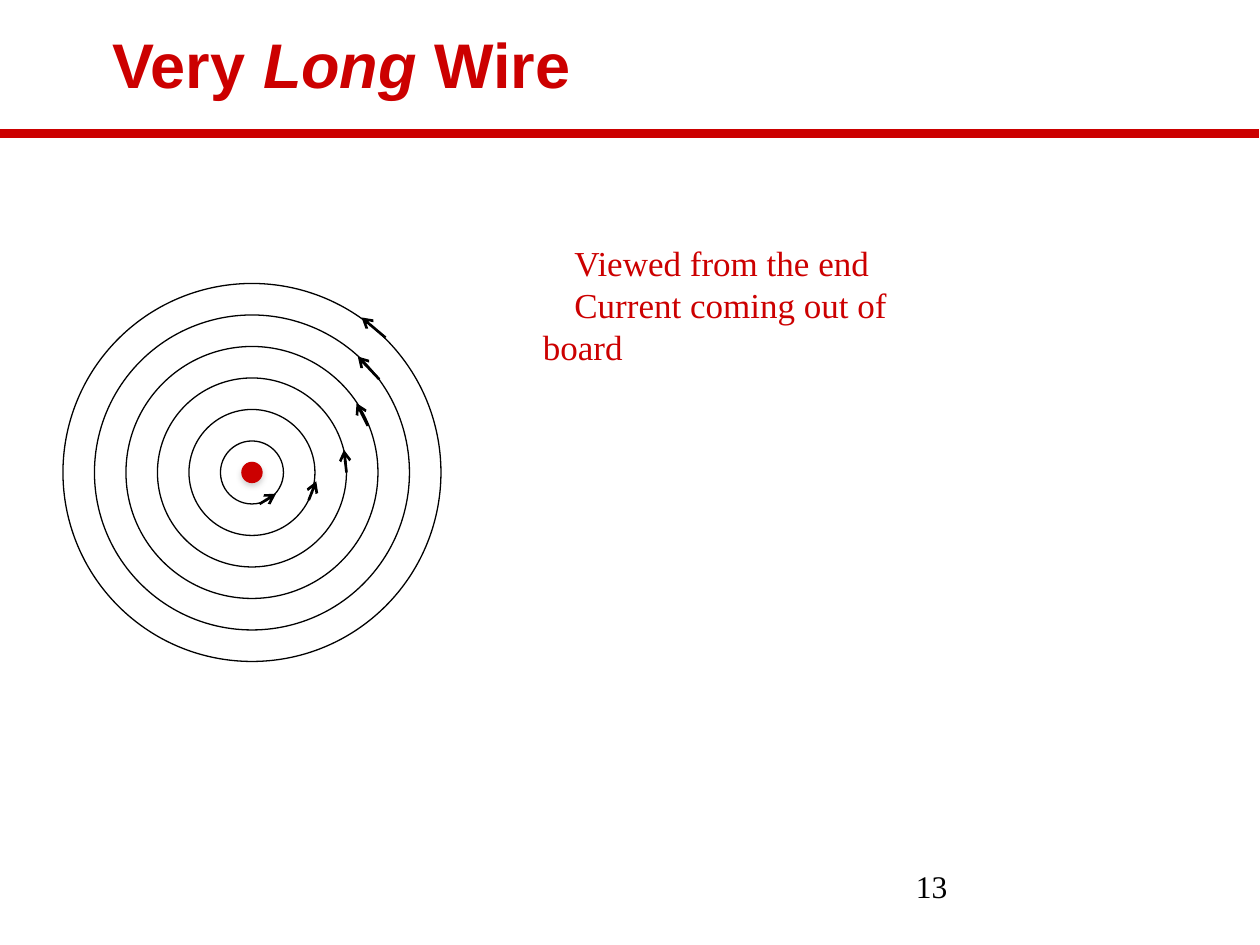
from lxml import etree
from pptx import Presentation, util as u
from pptx.dml.color import RGBColor
from pptx.enum import shapes, text
from pptx.oxml.ns import qn

PX = 9144  # 100 px to the inch
RED, BLACK, SHADOW = "CC0000", "000000", "808080"
SERIF, SANS = "Times New Roman", "Arial"

TITLE = [("Very ", False), ("Long", True), (" Wire", False)]
NOTES = ["Viewed from the end", "Current coming out of board"]
PAGE_NUMBER = "13"

CENTER = (200, 375)
RING_COUNT, RING_STEP = 6, 25
WIRE_RADIUS = 8.5
FIELD_ARROWS = [  # from the outer ring inwards
    ((306, 268), (287, 252)),
    ((301, 301), (284, 283)),
    ((292, 338), (283, 320)),
    ((275, 375), (273, 357)),
    ((245, 397), (251, 382)),
    ((206, 400), (219, 392)),
]
RULE = ((-1, 106), (999, 106))


def px(*lengths):
    return [u.Emu(round(n * PX)) for n in lengths]


def color(hex_code):
    return RGBColor.from_string(hex_code)


def add_circle(parent, radius):
    x, y = CENTER
    circle = parent.add_shape(
        shapes.MSO_SHAPE.OVAL, *px(x - radius, y - radius, 2 * radius, 2 * radius))
    circle.shadow.inherit = False
    return circle


def add_line(start, end, hex_code, width, arrow=False):
    line = slide.shapes.add_connector(
        shapes.MSO_CONNECTOR.STRAIGHT, *px(*start, *end))
    line.line.color.rgb = color(hex_code)
    line.line.width = u.Pt(width)
    etree.SubElement(line._element.spPr, qn("a:effectLst"))
    if arrow:
        etree.SubElement(line.line._get_or_add_ln(), qn("a:tailEnd"), type="arrow")


def add_text(box, paragraphs, font, indent=0, align=None, anchor=text.MSO_ANCHOR.TOP):
    """Write paragraphs, each a list of (wording, italic) runs, in one font."""
    frame = slide.shapes.add_textbox(*px(*box)).text_frame
    frame.word_wrap = True
    frame.vertical_anchor = anchor
    for i, runs in enumerate(paragraphs):
        paragraph = frame.add_paragraph() if i else frame.paragraphs[0]
        paragraph.alignment = align
        if indent:
            properties = paragraph._p.get_or_add_pPr()
            properties.set("marL", "0")
            properties.set("indent", str(indent * PX))
        for wording, italic in runs:
            run = paragraph.add_run()
            run.text = wording
            run.font.color.rgb = color(font["color"])
            for name, value in font["format"].items():
                setattr(run.font, name, value)
            run.font.italic = italic


def add_soft_shadow(shape):
    effects = shape._element.spPr.find(qn("a:effectLst"))
    shadow = etree.SubElement(
        effects, qn("a:outerShdw"), blurRad=str(u.Pt(3.1)), dist=str(u.Pt(1.8)),
        dir="5400000", rotWithShape="0")
    tint = etree.SubElement(shadow, qn("a:srgbClr"), val=SHADOW)
    etree.SubElement(tint, qn("a:alpha"), val="35000")


presentation = Presentation()
presentation.slide_width, presentation.slide_height = px(1000, 750)
slide = presentation.slides.add_slide(presentation.slide_layouts[6])

rings = slide.shapes.add_group_shape()
for number in range(1, RING_COUNT + 1):
    ring = add_circle(rings.shapes, number * RING_STEP)
    ring.fill.background()
    ring.line.color.rgb = color(BLACK)
    ring.line.width = u.Pt(0.75)

wire = add_circle(slide.shapes, WIRE_RADIUS)
wire.fill.solid()
wire.fill.fore_color.rgb = color(RED)
wire.line.fill.background()
add_soft_shadow(wire)

add_text((421, 187, 343, 77), [[(note, False)] for note in NOTES],
         {"color": RED, "format": {"name": SERIF, "size": u.Pt(20)}}, indent=25)
for start, end in FIELD_ARROWS:
    add_line(start, end, BLACK, 1.5, arrow=True)

add_text((-229, 0, 1000, 100), [TITLE],
         {"color": RED, "format": {"name": SANS, "size": u.Pt(36), "bold": True}},
         align=text.PP_ALIGN.CENTER, anchor=text.MSO_ANCHOR.MIDDLE)
add_line(*RULE, RED, 5)
add_text((717, 683, 208, 50), [[(PAGE_NUMBER, False)]],
         {"color": BLACK, "format": {"name": SERIF, "size": u.Pt(18)}})

presentation.save("out.pptx")
